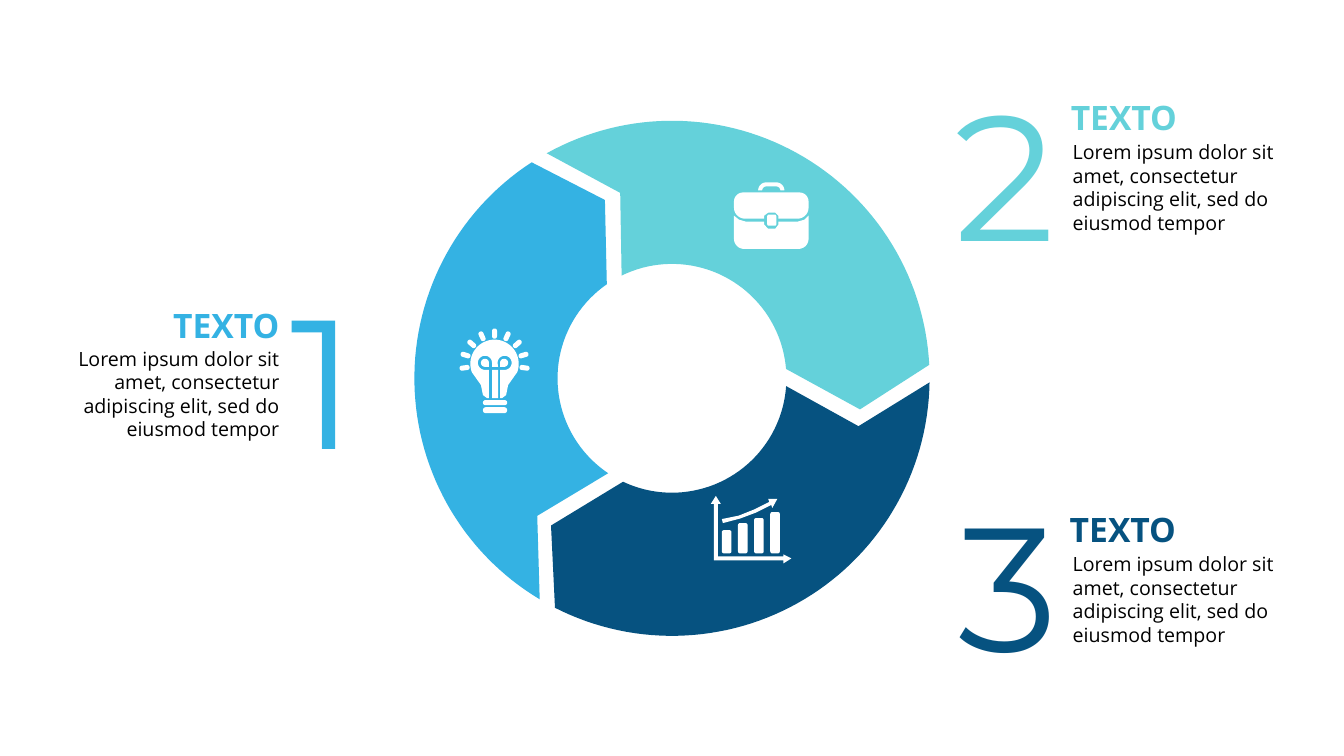
from dataclasses import dataclass
from math import cos, radians, sin

from pptx import Presentation
from pptx.dml.color import RGBColor
from pptx.enum.text import MSO_ANCHOR, PP_ALIGN
from pptx.util import Inches, Pt

LEFT, RIGHT = PP_ALIGN.LEFT, PP_ALIGN.RIGHT
TOP = MSO_ANCHOR.TOP

# The slide is a grid of 1333 columns and 750 rows of square cells.
COLUMNS, ROWS = 1333, 750
CELL = Inches(0.01)
BLANK_LAYOUT = 6


@dataclass(frozen=True)
class Theme:
    blue: str = "34B2E3"
    teal: str = "64D1DA"
    navy: str = "065280"
    white: str = "FFFFFF"
    black: str = "000000"
    text_font: str = "Open Sans"
    number_font: str = "Montserrat"
    heading_size: int = 24
    body_size: int = 14


THEME = Theme()
BODY_TEXT = "Lorem ipsum dolor sit amet, consectetur adipiscing elit, sed do eiusmod tempor"


@dataclass(frozen=True)
class Step:
    number: str
    color: str
    number_size: int
    number_box: tuple
    heading_box: tuple
    body_box: tuple
    alignment: PP_ALIGN
    turn: int


STEPS = [
    Step("1", THEME.blue, 131, (288, 264, 70, 220), (56, 302, 221, 58),
         (32, 339, 255, 104), RIGHT, 120),
    Step("2", THEME.teal, 127, (947, 63, 105, 214), (1062, 96, 172, 58),
         (1054, 134, 255, 104), LEFT, 240),
    Step("3", THEME.navy, 126, (951, 472, 102, 212), (1061, 505, 185, 58),
         (1054, 543, 255, 104), LEFT, 0),
]

RING_CENTER = (666.5, 375.3)
OUTER_RADIUS, INNER_RADIUS, TIP_RADIUS = 255.5, 113.5, 189


def arc(center_x, center_y, radius, start, end):
    """Points along an arc; degrees run clockwise from the right."""
    steps = max(2, round(abs(end - start) * radius ** 0.5 / 30))
    angles = [radians(start + (end - start) * i / steps) for i in range(steps + 1)]
    return [(center_x + radius * cos(a), center_y + radius * sin(a)) for a in angles]


def rotated(points, center, degrees):
    c, s = cos(radians(degrees)), sin(radians(degrees))
    x0, y0 = center
    return [(x0 + (x - x0) * c - (y - y0) * s, y0 + (x - x0) * s + (y - y0) * c)
            for x, y in points]


def rounded_bar(left, top, width, height, radius):
    right, bottom = left + width - radius, top + height - radius
    left, top = left + radius, top + radius
    return (arc(left, top, radius, 180, 270) + arc(right, top, radius, 270, 360)
            + arc(right, bottom, radius, 0, 90) + arc(left, bottom, radius, 90, 180))


def add_outline(slide, contours, color, origin=(0, 0)):
    """Draw closed contours as one filled freeform."""
    def to_slide(points):
        return [(round((x + origin[0]) * CELL), round((y + origin[1]) * CELL))
                for x, y in points]

    first, *others = [to_slide(contour) for contour in contours]
    builder = slide.shapes.build_freeform(*first[0])
    builder.add_line_segments(first[1:], close=True)
    for contour in others:
        builder.move_to(*contour[0])
        builder.add_line_segments(contour[1:], close=True)
    shape = builder.convert_to_shape()
    shape.shadow.inherit = False
    shape.fill.solid()
    shape.fill.fore_color.rgb = RGBColor.from_string(color)
    shape.line.fill.background()


def add_text(slide, box, text, color, font, alignment=LEFT, inset=(0, 0)):
    shape = slide.shapes.add_textbox(*[value * CELL for value in box])
    frame = shape.text_frame
    side, edge = [value * CELL for value in inset]
    frame_format = {"word_wrap": True, "vertical_anchor": TOP, "margin_left": side,
                    "margin_right": side, "margin_top": edge, "margin_bottom": edge}
    for name, value in frame_format.items():
        setattr(frame, name, value)
    paragraph = frame.paragraphs[0]
    paragraph.alignment = alignment
    run = paragraph.add_run()
    run.text = text
    for name, value in font.items():
        setattr(run.font, name, value)
    run.font.color.rgb = RGBColor.from_string(color)


def add_step_text(slide, step):
    heading_font = {"name": THEME.text_font, "size": Pt(THEME.heading_size), "bold": True}
    body_font = {"name": THEME.text_font, "size": Pt(THEME.body_size)}
    number_font = {"name": THEME.number_font, "size": Pt(step.number_size)}
    add_text(slide, step.body_box, BODY_TEXT, THEME.black, body_font,
             step.alignment, inset=(10, 5))
    add_text(slide, step.heading_box, "TEXTO", step.color, heading_font, step.alignment)
    add_text(slide, step.number_box, step.number, step.color, number_font)


def add_ring_segment(slide, step):
    """One third of the ring: a notch at its start and a tip at its end."""
    segment = (arc(*RING_CENTER, OUTER_RADIUS, 0.9, 117)
               + arc(*RING_CENTER, TIP_RADIUS, 129.4, 129.4)[:1]
               + arc(*RING_CENTER, INNER_RADIUS, 115.3, 3.9)
               + arc(*RING_CENTER, TIP_RADIUS + 2, 14.4, 14.4)[:1])
    add_outline(slide, [rotated(segment, RING_CENTER, step.turn)], step.color)


def add_light_bulb(slide, origin):
    middle = (35.5, 35)
    ray = rounded_bar(33, 0, 5, 10, 2.4)
    rays = [rotated(ray, middle, 24.4 * i) for i in range(-4, 5)]
    glass = (arc(35.5, 35, 24, 160, 380)
             + [(49, 56), (47, 66), (43, 69), (41, 69), (41, 41)]
             + arc(45.5, 34, 7, 90, -180) + [(39, 38), (33, 38)]
             + arc(26, 34, 7, 0, -270)
             + [(30, 41), (30, 69), (28, 69), (24, 66), (22, 56)])
    left_loop = arc(26, 34, 4, 90, 360) + [(30, 38)]
    right_loop = arc(45, 34, 4, -180, 90) + [(41, 38)]
    stem = [(33, 41), (39, 41), (39, 69), (33, 69)]
    base = [rounded_bar(24, 71, 24, 5, 2.4), rounded_bar(24, 78, 24, 6, 2.9)]
    add_outline(slide, [glass, left_loop, right_loop, stem, *base, *rays],
                THEME.white, origin)


def add_briefcase(slide, origin):
    handle = (arc(32, 8, 8, 180, 270) + arc(42, 8, 8, 270, 360)
              + arc(42, 8, 4, 0, -90) + arc(32, 8, 4, -90, -180))
    flap = (arc(9, 19, 9, 180, 270) + arc(65, 19, 9, 270, 360)
            + arc(63, 25, 11, 0, 90)
            + [(44, 36), (44, 33), (41, 30), (34, 30), (30, 33), (30, 36)]
            + arc(11, 25, 11, 90, 180))
    case = ([(0, 33), (5, 37), (12, 39), (30, 39), (30, 42), (34, 46), (41, 46),
             (44, 42), (44, 39), (63, 39), (70, 37), (74, 33)]
            + arc(64, 56, 10, 0, 90) + arc(10, 56, 10, 90, 180))
    clasp = rounded_bar(33, 32, 9, 11, 1.5)
    add_outline(slide, [handle, flap, case, clasp], THEME.white, origin)


def add_growth_chart(slide, origin):
    bars = [rounded_bar(11 + 16 * i, top, 9.5, 57 - top, 2)
            for i, top in enumerate((34, 27, 22, 16))]
    trend = [(12, 27), (29, 22.5), (45, 16.5), (60, 9), (61, 12), (66, 3),
             (57, 3), (58, 6), (43, 13.5), (28, 19.5), (11, 23)]
    axes = [(80, 62), (72, 58), (72, 60), (7, 60), (7, 8), (10, 8), (5, 0),
            (0, 8), (3, 8), (3, 64), (72, 64), (72, 67)]
    add_outline(slide, [*bars, trend, axes], THEME.white, origin)


def main():
    presentation = Presentation()
    presentation.slide_width = COLUMNS * CELL
    presentation.slide_height = ROWS * CELL
    slide = presentation.slides.add_slide(presentation.slide_layouts[BLANK_LAYOUT])
    for step in STEPS:
        add_step_text(slide, step)
        add_ring_segment(slide, step)
    add_light_bulb(slide, (455, 326))
    add_briefcase(slide, (728, 181))
    add_growth_chart(slide, (705, 492))
    presentation.save("out.pptx")


if __name__ == "__main__":
    main()
